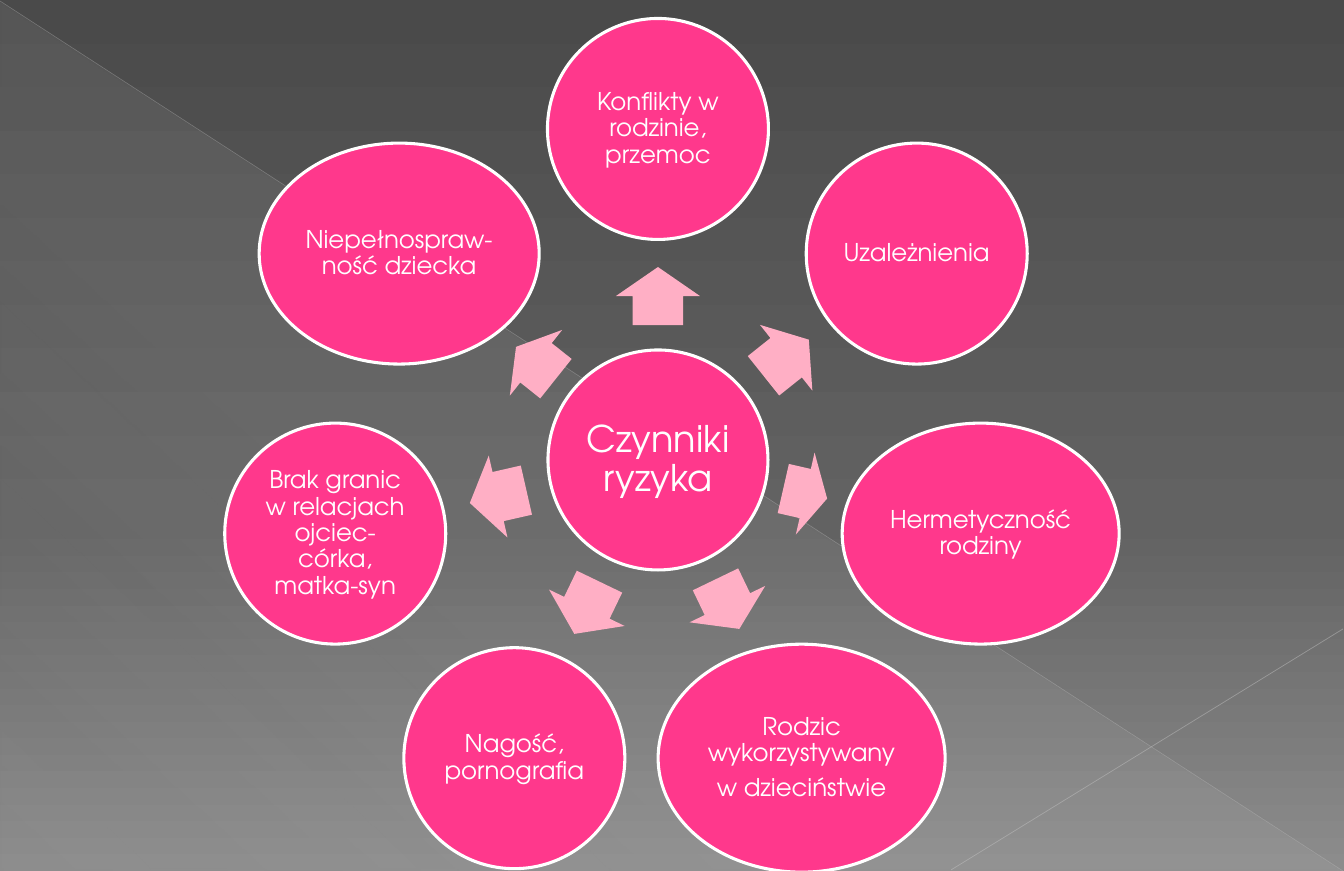
from math import cos, radians, sin

from lxml.etree import SubElement
from pptx import Presentation
from pptx.dml.color import RGBColor
from pptx.enum.shapes import MSO_CONNECTOR, MSO_SHAPE
from pptx.enum.text import MSO_ANCHOR, PP_ALIGN
from pptx.oxml.ns import qn
from pptx.util import Pt

HUB = ["Czynniki ryzyka"]
# fields: paragraphs, ellipse width, ellipse height, arrow length, arrow distance
FACTORS = [
    (["Konflikty w rodzinie, przemoc"], 221, 221, 58, 164),
    (["Uzależnienia"], 221, 221, 58, 164),
    (["Hermetyczność rodziny"], 277, 221, 45, 151),
    (["Rodzic wykorzystywany", "w dzieciństwie"], 287, 228, 55, 160),
    (["Nagość, pornografia"], 221, 221, 58, 164),
    (["Brak granic w relacjach ojciec-córka, matka-syn"], 221, 221, 58, 164),
    (["Niepełnospraw-ność dziecka"], 280, 221, 51, 156),
]

WHITE = RGBColor(0xFF, 0xFF, 0xFF)
PINK = RGBColor(0xFF, 0x38, 0x8C)
LIGHT_PINK = RGBColor(0xFF, 0xAF, 0xC5)
DARK_GREY = RGBColor(0x4A, 0x4A, 0x4A)
MID_GREY = RGBColor(0x62, 0x62, 0x62)
PALE_GREY = RGBColor(0x8C, 0x8C, 0x8C)
VEIL = RGBColor(0xD2, 0xD2, 0xD2)
LONG_RAY = RGBColor(0xBF, 0xBF, 0xBF)
SHORT_RAY = RGBColor(0xC6, 0xC6, 0xC6)

BACKDROP = [(0, DARK_GREY, 100), (60, MID_GREY, 100), (100, PALE_GREY, 100)]
VEIL_STOPS = [(0, VEIL, 10), (70, VEIL, 8), (100, VEIL, 1)]
RAYS = [
    ((0, 1, 1343, 871), LONG_RAY, 0.39, 35),
    ((1343, 629, 951, 870), SHORT_RAY, 0.47, 45),
]

SCALE = 914400 / 110.1
WIDTH, HEIGHT = 1344, 871
CENTER_X, CENTER_Y = 658, 460
ORBIT = 331
HUB_SIZE = 220
ARROW_WIDTH = 84
FONT = "TeX Gyre Adventor"


def px(*lengths):
    return [round(length * SCALE) for length in lengths]


def set_opacity(color, percent):
    SubElement(color, qn("a:alpha")).set("val", str(percent * 1000))


def set_gradient(fill, owner, stops, angle):
    fill.gradient()
    gradient = next(owner.iter(qn("a:gradFill")))
    stop_list = gradient.find(qn("a:gsLst"))
    for old in list(stop_list):
        stop_list.remove(old)
    for position, color, opacity in stops:
        stop = SubElement(stop_list, qn("a:gs"), pos=str(position * 1000))
        tint = SubElement(stop, qn("a:srgbClr"), val=str(color))
        if opacity < 100:
            set_opacity(tint, opacity)
    gradient.find(qn("a:lin")).set("ang", str(angle * 60000))


def add_centered(kind, x, y, width, height, color):
    shape = slide.shapes.add_shape(kind, *px(x - width / 2, y - height / 2, width, height))
    shape.shadow.inherit = False
    shape.fill.solid()
    shape.fill.fore_color.rgb = color
    return shape


def add_bubble(paragraphs, x, y, width, height, size, inset):
    bubble = add_centered(MSO_SHAPE.OVAL, x, y, width, height, PINK)
    bubble.line.color.rgb = WHITE
    bubble.line.width = Pt(2)
    frame = bubble.text_frame
    margin = px(inset)[0]
    frame_format = {
        "word_wrap": True, "vertical_anchor": MSO_ANCHOR.MIDDLE,
        "margin_left": margin, "margin_right": margin,
        "margin_top": margin, "margin_bottom": margin,
    }
    paragraph_format = {
        "alignment": PP_ALIGN.CENTER, "line_spacing": 0.9, "space_after": Pt(size * 0.35),
    }
    for name, value in frame_format.items():
        setattr(frame, name, value)
    for index, text in enumerate(paragraphs):
        paragraph = frame.add_paragraph() if index else frame.paragraphs[0]
        for name, value in paragraph_format.items():
            setattr(paragraph, name, value)
        run = paragraph.add_run()
        run.text = text
        for name, value in {"name": FONT, "size": Pt(size)}.items():
            setattr(run.font, name, value)
        run.font.color.rgb = WHITE


deck = Presentation()
deck.slide_width, deck.slide_height = px(WIDTH, HEIGHT)
slide = deck.slides.add_slide(deck.slide_layouts[6])
set_gradient(slide.background.fill, slide.element, BACKDROP, 90)

veil = slide.shapes.add_shape(MSO_SHAPE.RIGHT_TRIANGLE, *px(1, 2, 1342, 869))
veil.shadow.inherit = False
veil.line.fill.background()
set_gradient(veil.fill, veil.element, VEIL_STOPS, 133)

for ends, color, weight, opacity in RAYS:
    ray = slide.shapes.add_connector(MSO_CONNECTOR.STRAIGHT, *px(*ends))
    ray.line.color.rgb = color
    ray.line.width = Pt(weight)
    set_opacity(next(ray.element.iter(qn("a:srgbClr"))), opacity)
    SubElement(ray.element.spPr, qn("a:effectLst"))

add_bubble(HUB, CENTER_X, CENTER_Y, HUB_SIZE, HUB_SIZE, 24, 3)

for index, (paragraphs, width, height, length, distance) in enumerate(FACTORS):
    angle = index * 360 / len(FACTORS) - 90
    across, down = cos(radians(angle)), sin(radians(angle))
    arrow = add_centered(MSO_SHAPE.RIGHT_ARROW, CENTER_X + distance * across,
                         CENTER_Y + distance * down, length, ARROW_WIDTH, LIGHT_PINK)
    arrow.line.fill.background()
    arrow.rotation = angle % 360
    arrow.adjustments[0], arrow.adjustments[1] = 0.6, 0.5
    add_bubble(paragraphs, CENTER_X + ORBIT * across, CENTER_Y + ORBIT * down,
               width, height, 16, 2)

deck.save("out.pptx")
